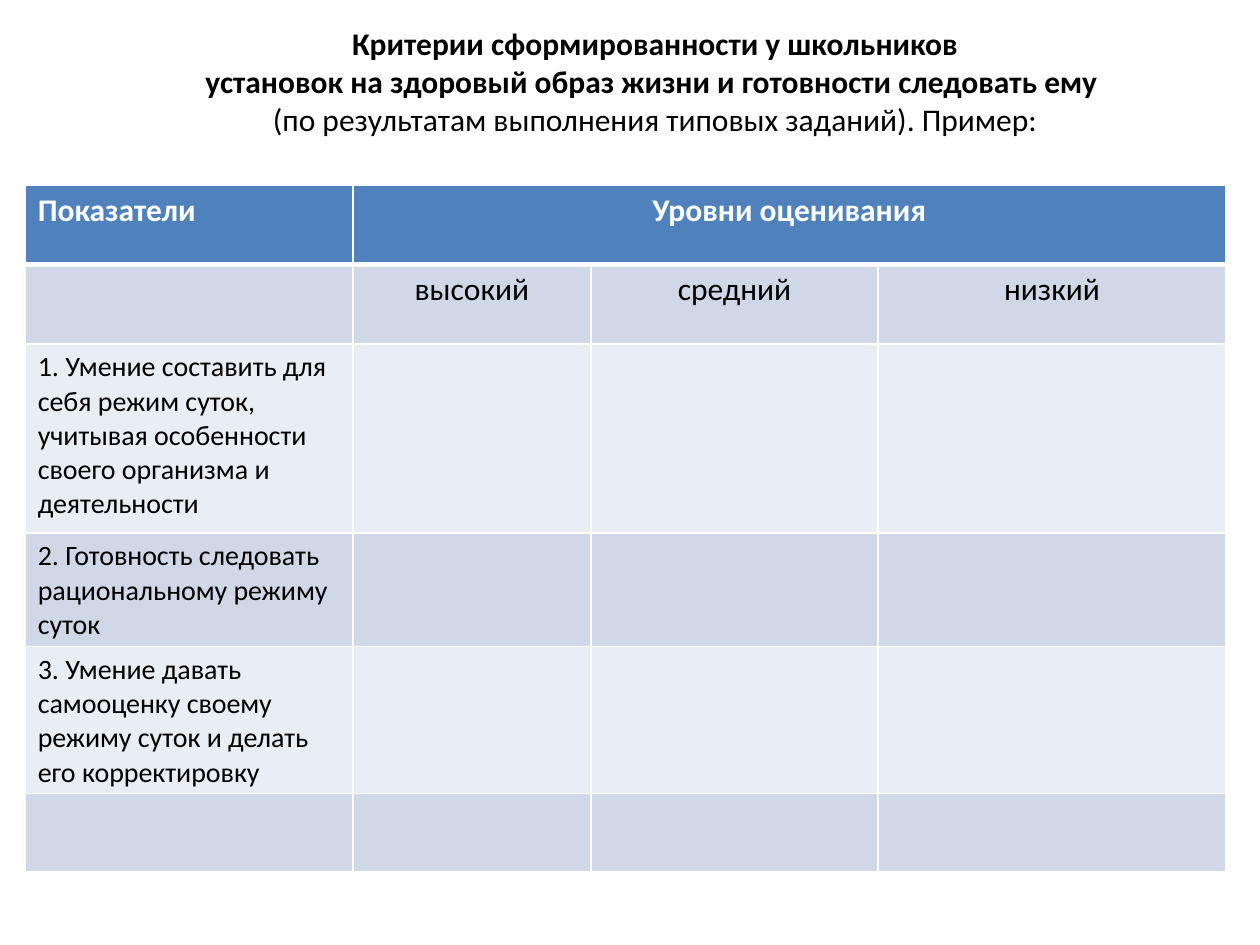
from dataclasses import dataclass

from lxml.etree import SubElement
from pptx import Presentation
from pptx.dml.color import RGBColor
from pptx.enum.text import MSO_ANCHOR, PP_ALIGN
from pptx.oxml.ns import qn
from pptx.util import Inches, Pt


@dataclass(frozen=True)
class Theme:
    """Colours, font and type sizes of the slide."""
    font: str = "Calibri"
    text: str = "000000"
    white: str = "FFFFFF"
    header: str = "4F81BD"
    band_dark: str = "D0D8E8"
    band_light: str = "E9EDF4"
    large: int = 18
    small: int = 16
    border: int = 1
    header_border: int = 3


THEME = Theme()
TITLE_LINES = [
    ("Критерии сформированности у школьников", True),
    ("установок на здоровый образ жизни и готовности следовать ему ", True),
    ("(по результатам выполнения типовых заданий). Пример:", False),
]
COLUMN_WIDTHS = [2.6, 1.89, 2.28, 2.76]
ROW_HEIGHTS = [0.63, 0.63, 1.5, 0.62, 1.14, 0.62]
CRITERIA_ROWS = [
    ["Показатели", "Уровни оценивания"],
    ["", "высокий", "средний", "низкий"],
    ["1. Умение составить для себя режим суток, учитывая особенности "
     "своего организма и деятельности"],
    ["2. Готовность следовать рациональному режиму суток"],
    ["3. Умение давать самооценку своему режиму суток и делать его корректировку"],
    [],
]


def apply_format(target, values):
    """Set every attribute named in values on the target."""
    for name, value in values.items():
        setattr(target, name, value)


def add_text(paragraph, text, size, color, bold=False):
    """Append one formatted run to the paragraph."""
    run = paragraph.add_run()
    run.text = text
    apply_format(run.font, {"name": THEME.font, "size": Pt(size), "bold": bold})
    run.font.color.rgb = RGBColor.from_string(color)


def add_title(slide):
    """Add the centred three-line heading."""
    shape = slide.shapes.add_textbox(Inches(0.51), Inches(0.28), Inches(9.38), Inches(1.02))
    frame = shape.text_frame
    apply_format(frame, {
        "word_wrap": True,
        "vertical_anchor": MSO_ANCHOR.MIDDLE,
        "margin_top": 0,
        "margin_bottom": Inches(0.3),
    })
    paragraph = frame.paragraphs[0]
    paragraph.alignment = PP_ALIGN.CENTER
    for index, (text, bold) in enumerate(TITLE_LINES):
        if index:
            paragraph.add_line_break()
        add_text(paragraph, text, THEME.large, THEME.text, bold)


def set_borders(cell, widths):
    """Draw white cell borders of the given widths in points."""
    properties = cell._tc.get_or_add_tcPr()
    for side, width in widths.items():
        line = SubElement(properties, qn(f"a:ln{side}"), w=str(Pt(width)))
        fill = SubElement(line, qn("a:solidFill"))
        SubElement(fill, qn("a:srgbClr"), val=THEME.white)


def format_cell(cell, row, column, text):
    """Give a cell its borders, fill and text according to its place."""
    widths = dict.fromkeys("LRTB", THEME.border)
    if row < 2:
        widths["B" if row == 0 else "T"] = THEME.header_border
    set_borders(cell, widths)
    band = THEME.band_dark if row % 2 else THEME.band_light
    cell.fill.solid()
    cell.fill.fore_color.rgb = RGBColor.from_string(band if row else THEME.header)
    paragraph = cell.text_frame.paragraphs[0]
    paragraph.alignment = PP_ALIGN.CENTER if column else PP_ALIGN.LEFT
    if text:
        size = THEME.large if row < 2 else THEME.small
        add_text(paragraph, text, size, THEME.text if row else THEME.white, row == 0)


def add_criteria_table(slide):
    """Add the table of indicators and assessment levels."""
    table = slide.shapes.add_table(
        len(ROW_HEIGHTS), len(COLUMN_WIDTHS), Inches(0.2), Inches(1.47),
        Inches(sum(COLUMN_WIDTHS)), Inches(sum(ROW_HEIGHTS)),
    ).table
    for column, width in zip(table.columns, COLUMN_WIDTHS):
        column.width = Inches(width)
    for row, height in zip(table.rows, ROW_HEIGHTS):
        row.height = Inches(height)
    table.cell(0, 1).merge(table.cell(0, 3))
    for row, texts in enumerate(CRITERIA_ROWS):
        for column in range(len(COLUMN_WIDTHS)):
            text = texts[column] if column < len(texts) else ""
            format_cell(table.cell(row, column), row, column, text)


def main():
    """Build and save the slide."""
    presentation = Presentation()
    apply_format(presentation, {"slide_width": Inches(10), "slide_height": Inches(7.5)})
    slide = presentation.slides.add_slide(presentation.slide_layouts[6])
    add_title(slide)
    add_criteria_table(slide)
    presentation.save("out.pptx")


if __name__ == "__main__":
    main()
